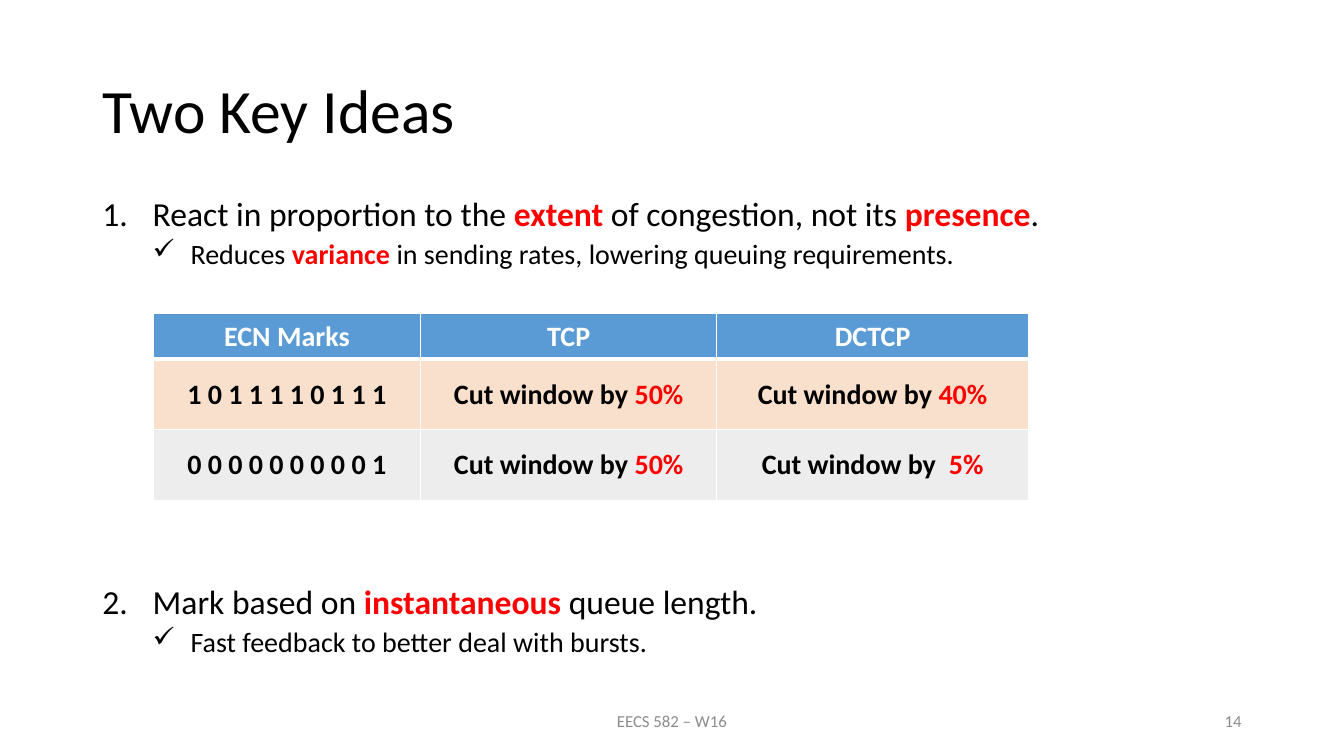
"""Build the Two Key Ideas slide with its comparison table of TCP and DCTCP."""
from lxml import etree
from pptx import Presentation
from pptx import util as u
from pptx.dml import color
from pptx.enum import text
from pptx.oxml import ns

Pt = u.Pt
COLORS = {"black": "000000", "red": "FF0000", "grey": "8C8C8C", "white": "FFFFFF",
          "header": "5B9BD5", "peach": "F9E0CD", "light": "EDEDED"}
ALIGN = text.PP_ALIGN
MIDDLE = text.MSO_ANCHOR.MIDDLE


def write(p, content, size, base="black", bold=False):
    """Write content in runs, with the parts between asterisks in bold red."""
    for i, part in enumerate(content.split("*")):
        if part:
            r = p.add_run()
            r.text = part
            r.font.name = "Calibri"
            r.font.size = Pt(size)
            r.font.bold = bold or i % 2 == 1
            r.font.color.rgb = color.RGBColor.from_string(COLORS["red" if i % 2 else base])


def add_box(left, top, width, height, anchor=MIDDLE):
    """Add a wrapping text box and return its text frame."""
    tf = s.shapes.add_textbox(Pt(left), Pt(top), Pt(width), Pt(height)).text_frame
    tf.word_wrap = True
    tf.vertical_anchor = anchor
    return tf


prs = Presentation()
prs.slide_width, prs.slide_height = Pt(960), Pt(540)
s = prs.slides.add_slide(prs.slide_layouts[6])

p = add_box(66, 28.8, 828, 104.4).paragraphs[0]
p.line_spacing = 0.9
write(p, "Two Key Ideas", 44)

footers = [(318, 324, "EECS 582 – W16", ALIGN.CENTER), (678, 216, "14", ALIGN.RIGHT)]
for left, width, content, align in footers:
    p = add_box(left, 500.5, width, 28.8).paragraphs[0]
    p.alignment = align
    write(p, content, 12, "grey")

ideas = [
    (140.8, "React in proportion to the *extent* of congestion, not its *presence*.",
     "Reduces *variance *in sending rates, lowering queuing requirements."),
    (418, "Mark based on *instantaneous* queue length.",
     "Fast feedback to better deal with bursts."),
]
for number, (top, idea, benefit) in enumerate(ideas, 1):
    tf = add_box(66, top, 794, 58, text.MSO_ANCHOR.TOP)
    tf.margin_top = tf.margin_bottom = 0
    levels = [
        (idea, 24, 0, 36, 36, "buAutoNum", {"type": "arabicPeriod", "startAt": str(number)}),
        (benefit, 20, 5, 63, 27, "buChar", {"char": "✓"}),
    ]
    for level, (content, size, before, indent, hang, bullet, attrs) in enumerate(levels):
        p = tf.add_paragraph() if level else tf.paragraphs[0]
        p.level = level
        p.line_spacing = 0.9
        p.space_before = Pt(before)
        pPr = p._p.get_or_add_pPr()
        pPr.set("marL", str(Pt(indent)))
        pPr.set("indent", str(-Pt(hang)))
        etree.SubElement(pPr, ns.qn(f"a:{bullet}"), attrs)
        write(p, content, size)

rows = [
    (32.4, "header", "white", 1, 3, ["ECN Marks", "TCP", "DCTCP"]),
    (50.4, "peach", "black", 3, 1,
     ["1 0 1 1 1 1 0 1 1 1", "Cut window by *50%*", "Cut window by *40%*"]),
    (50.4, "light", "black", 1, 1,
     ["0 0 0 0 0 0 0 0 0 1", "Cut window by *50%*", "Cut window by * 5%*"]),
]
widths = [190.8, 211.7, 222.5]
table = s.shapes.add_table(len(rows), len(widths), Pt(109.6), Pt(224),
                           Pt(sum(widths)), Pt(sum(row[0] for row in rows))).table
for column, width in zip(table.columns, widths):
    column.width = Pt(width)
for i, (height, fill, ink, above, below, contents) in enumerate(rows):
    table.rows[i].height = Pt(height)
    for j, content in enumerate(contents):
        cell = table.cell(i, j)
        cell.vertical_anchor = MIDDLE
        cell.margin_left = cell.margin_right = Pt(8.64)
        cell.margin_top = cell.margin_bottom = Pt(4.32)
        tcPr = cell._tc.get_or_add_tcPr()
        for side, weight in zip("LRTB", (1, 1, above, below)):
            ln = etree.SubElement(tcPr, ns.qn(f"a:ln{side}"), {"w": str(Pt(weight))})
            solid = etree.SubElement(ln, ns.qn("a:solidFill"))
            etree.SubElement(solid, ns.qn("a:srgbClr"), {"val": COLORS["white"]})
        cell.fill.solid()
        cell.fill.fore_color.rgb = color.RGBColor.from_string(COLORS[fill])
        p = cell.text_frame.paragraphs[0]
        p.alignment = ALIGN.CENTER
        write(p, content, 20, ink, True)

prs.save("out.pptx")
